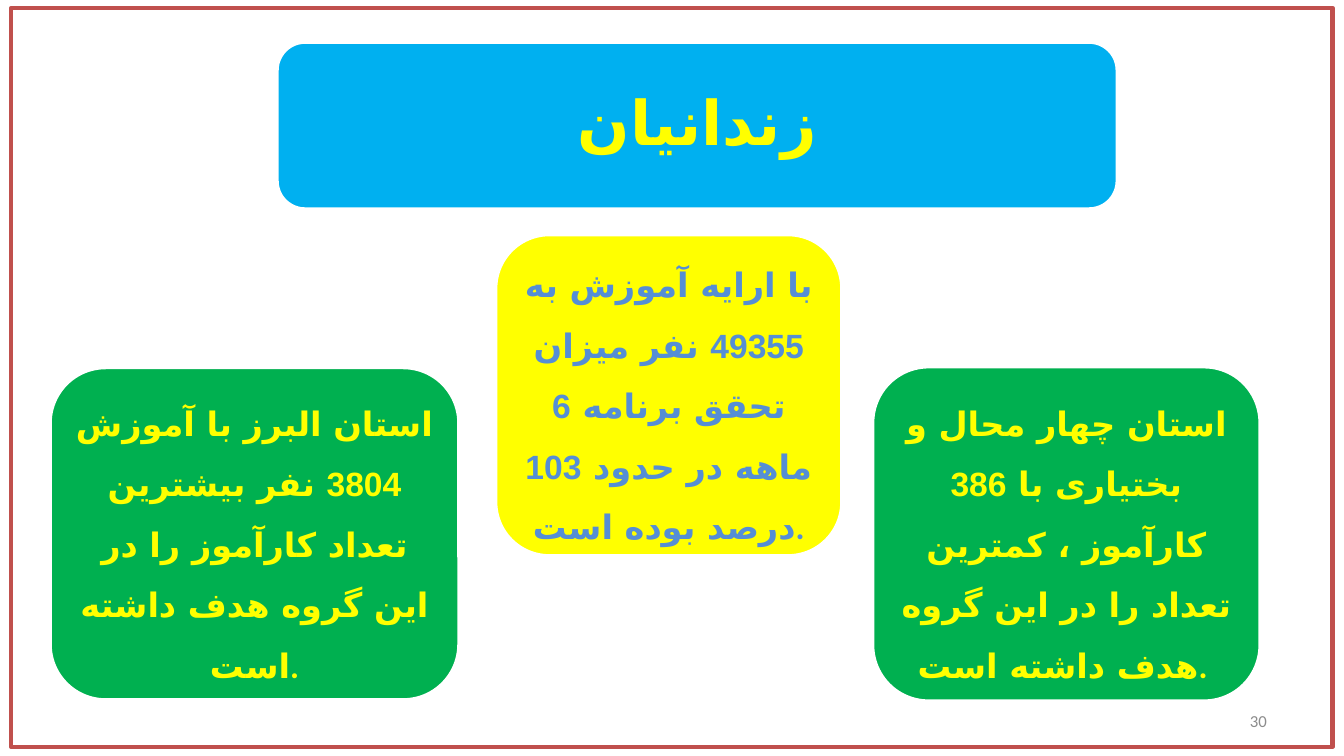
from dataclasses import dataclass
from itertools import groupby

import pptx
import pptx.dml.color
import pptx.enum.shapes
import pptx.enum.text
import pptx.oxml
import pptx.oxml.ns
import pptx.util
from pptx.util import Cm

RGBColor = pptx.dml.color.RGBColor
Shape = pptx.enum.shapes.MSO_SHAPE
Align = pptx.enum.text.PP_ALIGN

WHITE = RGBColor(0xFF, 0xFF, 0xFF)
YELLOW = RGBColor(0xFF, 0xFF, 0x00)
GREEN = RGBColor(0x00, 0xB0, 0x50)
SKY = RGBColor(0x00, 0xB0, 0xF0)
BLUE = RGBColor(0x55, 0x8E, 0xD5)
RED = RGBColor(0xC0, 0x50, 0x4D)
GREY = RGBColor(0x8C, 0x8C, 0x8C)

TITLE_AREA = (6.99, 1.07, 21.16, 4.19)


@dataclass(frozen=True)
class Card:
    area: tuple[float, float, float, float]
    fill: RGBColor
    color: RGBColor
    text: str


CARDS = (
    Card((1.27, 9.27, 10.29, 8.36), GREEN, YELLOW,
         "استان البرز با آموزش 3804 نفر بیشترین تعداد کارآموز را در این گروه هدف داشته است."),
    Card((12.5, 5.92, 8.71, 8.08), YELLOW, BLUE,
         "با ارایه آموزش به 49355 نفر میزان تحقق برنامه 6 ماهه در حدود 103 درصد بوده است."),
    Card((22, 9.25, 9.75, 8.41), GREEN, YELLOW,
         "استان چهار محال و بختیاری با 386 کارآموز ، کمترین تعداد را در این گروه هدف داشته است. "),
)


def lengths(area: tuple[float, float, float, float]) -> list[Cm]:
    return [Cm(value) for value in area]


def add_panel(page, kind, area, fill, line, width: float):
    """Draw a preset shape; a fill of None leaves it hollow."""
    panel = page.shapes.add_shape(kind, *lengths(area))
    panel.shadow.inherit = False
    if fill is None:
        panel.fill.background()
    else:
        panel.fill.solid()
        panel.fill.fore_color.rgb = fill
    panel.line.color.rgb = line
    panel.line.width = pptx.util.Pt(width)
    return panel


def write(box, text: str, size: float, color: RGBColor, inset: float,
          align=Align.CENTER, spacing: float = 1.0, bold: bool = True) -> None:
    """Fill a box with one formatted paragraph."""
    frame = box.text_frame
    margins = {f"margin_{side}": Cm(inset) for side in ("left", "top", "right", "bottom")}
    frame_format = {
        "word_wrap": True,
        "auto_size": pptx.enum.text.MSO_AUTO_SIZE.NONE,
        "vertical_anchor": pptx.enum.text.MSO_ANCHOR.MIDDLE,
        **margins,
    }
    for name, value in frame_format.items():
        setattr(frame, name, value)

    para = frame.paragraphs[0]
    para.alignment = align
    para.line_spacing = spacing
    font_format = {"name": "Calibri", "size": pptx.util.Pt(size), "bold": bold}
    # Numbers and Persian words take different complex-script fonts
    for is_number, letters in groupby(text, str.isdigit):
        span = para.add_run()
        span.text = "".join(letters)
        for name, value in font_format.items():
            setattr(span.font, name, value)
        span.font.color.rgb = color
        typeface = "Arial" if is_number else "DejaVu Sans"
        span.font._element.append(pptx.oxml.parse_xml(
            f'<a:cs {pptx.oxml.ns.nsdecls("a")} typeface="{typeface}"/>'))


def main() -> None:
    deck = pptx.Presentation()
    deck.slide_width, deck.slide_height = Cm(33.87), Cm(19.05)
    page = deck.slides.add_slide(deck.slide_layouts[5])

    # Page border
    add_panel(page, Shape.RECTANGLE, (0.28, 0.2, 33.3, 18.62), None, RED, 3)

    # Title on its banner
    add_panel(page, Shape.ROUNDED_RECTANGLE, TITLE_AREA, SKY, WHITE, 2)
    title = page.shapes.title
    title.left, title.top, title.width, title.height = lengths(TITLE_AREA)
    write(title, "زندانیان", 44, YELLOW, inset=0.51, spacing=0.9)
    page.shapes._spTree.append(title._element)

    # Cards
    for card in CARDS:
        panel = add_panel(page, Shape.ROUNDED_RECTANGLE, card.area, card.fill, WHITE, 2)
        write(panel, card.text, 24, card.color, inset=0.17, spacing=1.5)

    # Page number
    number = page.shapes.add_textbox(*lengths((24.28, 17.65, 7.9, 1.02)))
    write(number, "30", 12, GREY, inset=0.25, align=Align.RIGHT, bold=False)

    deck.save("out.pptx")


if __name__ == "__main__":
    main()
